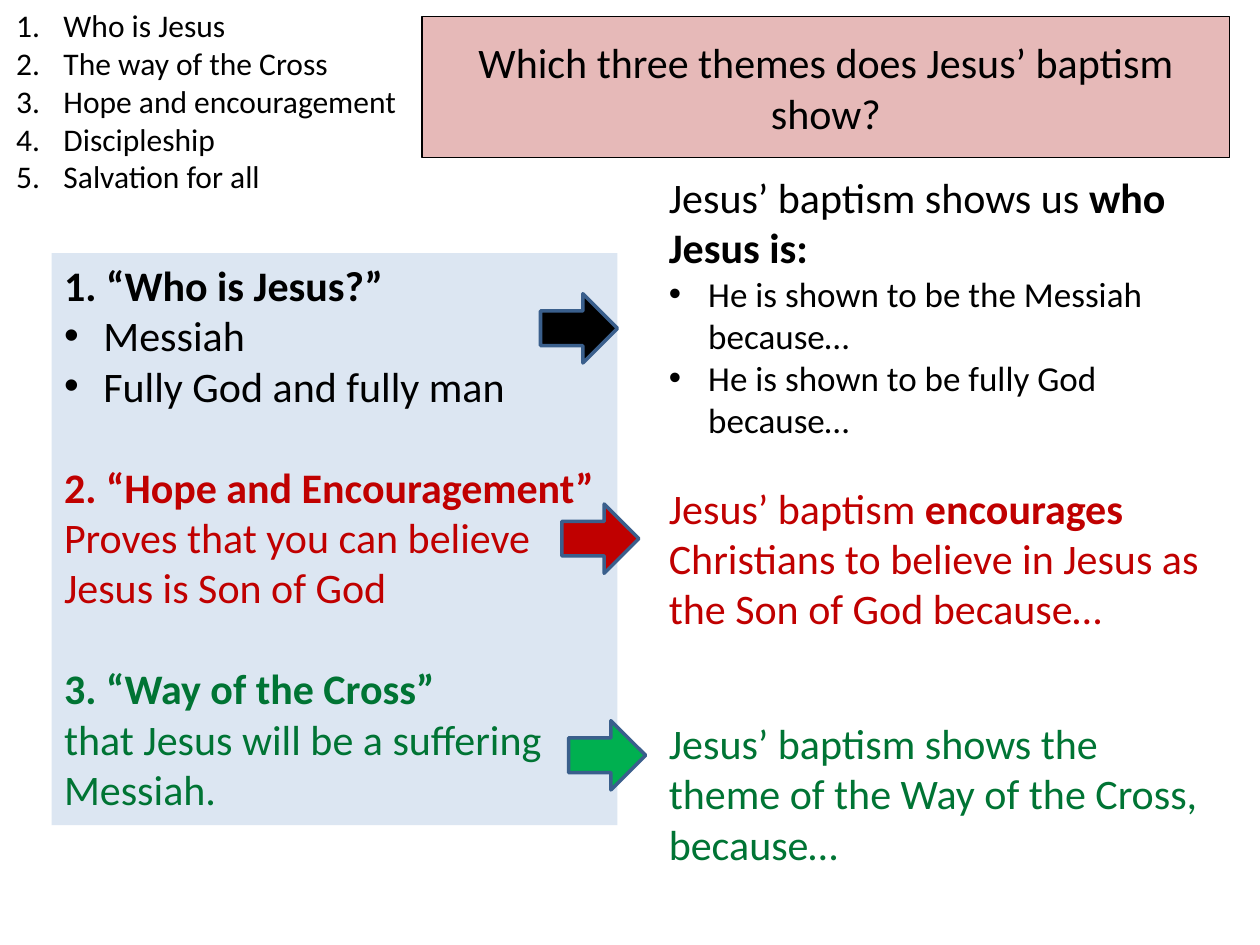
from dataclasses import dataclass

from lxml.etree import SubElement
from pptx import Presentation
from pptx.dml.color import RGBColor
from pptx.enum.shapes import MSO_SHAPE
from pptx.enum.text import MSO_ANCHOR, PP_ALIGN
from pptx.oxml.ns import qn
from pptx.util import Pt

BLACK, RED, GREEN = "000000", "C00000", "007434"


@dataclass
class Span:
    text: str
    bold: bool = False


@dataclass
class Para:
    spans: list[Span]
    color: str = BLACK
    size: float = 24
    marker: str = ""
    indent: float = 0
    before: float = 0
    align: PP_ALIGN = PP_ALIGN.LEFT


@dataclass
class Box:
    left: float
    top: float
    width: float
    height: float
    paras: list[Para]
    fill: str = ""
    line: str = ""
    anchor: MSO_ANCHOR = MSO_ANCHOR.TOP


@dataclass
class Arrow:
    left: float
    top: float
    fill: str


def rgb(color: str) -> RGBColor:
    return RGBColor.from_string(color)


def set_values(target, values: dict) -> None:
    for name, value in values.items():
        setattr(target, name, value)


def paint(shape, fill: str, line: str, weight: float) -> None:
    shape.shadow.inherit = False
    shape.fill.solid()
    shape.fill.fore_color.rgb = rgb(fill)
    if line:
        shape.line.color.rgb = rgb(line)
        shape.line.width = Pt(weight)
    else:
        shape.line.fill.background()


def add_marker(paragraph, para: Para) -> None:
    properties = paragraph._p.get_or_add_pPr()
    properties.set("marL", str(Pt(para.indent)))
    properties.set("indent", str(-Pt(para.indent)))
    if para.marker == "•":
        SubElement(properties, qn("a:buFont"), typeface="Arial")
        SubElement(properties, qn("a:buChar"), char=para.marker)
    else:
        SubElement(properties, qn("a:buFont"), typeface="+mj-lt")
        SubElement(properties, qn("a:buAutoNum"), type=para.marker)


def write_para(paragraph, para: Para) -> None:
    if para.marker:
        add_marker(paragraph, para)
    paragraph.alignment = para.align
    if para.before:
        paragraph.space_before = Pt(para.before)
    for span in para.spans:
        run = paragraph.add_run()
        run.text = span.text
        set_values(run.font, {"name": "Calibri", "size": Pt(para.size), "bold": span.bold})
        run.font.color.rgb = rgb(para.color)


def draw_box(page, box: Box) -> None:
    place = [Pt(value) for value in (box.left, box.top, box.width, box.height)]
    if box.fill:
        shape = page.shapes.add_shape(MSO_SHAPE.RECTANGLE, *place)
        paint(shape, box.fill, box.line, 0.75)
    else:
        shape = page.shapes.add_textbox(*place)
    frame = shape.text_frame
    set_values(frame, {"word_wrap": True, "vertical_anchor": box.anchor})
    for index, para in enumerate(box.paras):
        write_para(frame.add_paragraph() if index else frame.paragraphs[0], para)


def draw_arrow(page, arrow: Arrow) -> None:
    shape = page.shapes.add_shape(
        MSO_SHAPE.RIGHT_ARROW, Pt(arrow.left), Pt(arrow.top), Pt(44), Pt(39.6)
    )
    paint(shape, arrow.fill, "3A5F8C", 2)


def bullet(text: str, size: float) -> Para:
    return Para([Span(text)], size=size, marker="•", indent=22.5)


def theme(title: str, text: str, color: str) -> list[Para]:
    return [Para([Span(title, True)], color, before=28.8), Para([Span(text)], color)]


TITLE = Box(
    241.2, 9.4, 461.5, 80.6,
    [Para([Span("Which three themes does Jesus’ baptism show?")], align=PP_ALIGN.CENTER)],
    "E6B9B8", BLACK, MSO_ANCHOR.MIDDLE,
)
THEMES = Box(
    29.5, 144.7, 323.3, 326.9,
    [
        Para([Span("1. “Who is Jesus?”", True)]),
        bullet("Messiah", 24),
        bullet("Fully God and fully man", 24),
        *theme("2. “Hope and Encouragement”",
               "Proves that you can believe Jesus is Son of God", RED),
        *theme("3. “Way of the Cross”",
               "that Jesus will be a suffering Messiah.", GREEN),
    ],
    "DCE6F2",
)
ANSWERS = Box(
    375.1, 94.3, 325.4, 409.7,
    [
        Para([Span("Jesus’ baptism shows us "), Span("who Jesus is:", True)]),
        bullet("He is shown to be the Messiah because…", 20),
        bullet("He is shown to be fully God because…", 20),
        Para([Span("Jesus’ baptism "), Span("encourages ", True),
              Span("Christians to believe in Jesus as the Son of God because…")],
             RED, before=24),
        Para([Span("Jesus’ baptism shows the theme of the Way of the Cross, because…")],
             GREEN, before=48),
    ],
)
TOPICS = Box(
    2.2, 0, 261.4, 116.6,
    [
        Para([Span(topic)], size=18, marker="arabicPeriod", indent=27)
        for topic in ("Who is Jesus", "The way of the Cross", "Hope and encouragement",
                      "Discipleship", "Salvation for all")
    ],
)
ARROWS = [Arrow(308.9, 167.8, BLACK), Arrow(321.1, 288, RED), Arrow(324.9, 411.8, "00B050")]


def main() -> None:
    deck = Presentation()
    set_values(deck, {"slide_width": Pt(720), "slide_height": Pt(540)})
    page = deck.slides.add_slide(deck.slide_layouts[6])
    for box in (TITLE, THEMES, ANSWERS):
        draw_box(page, box)
    for arrow in ARROWS:
        draw_arrow(page, arrow)
    draw_box(page, TOPICS)
    deck.save("out.pptx")


if __name__ == "__main__":
    main()
